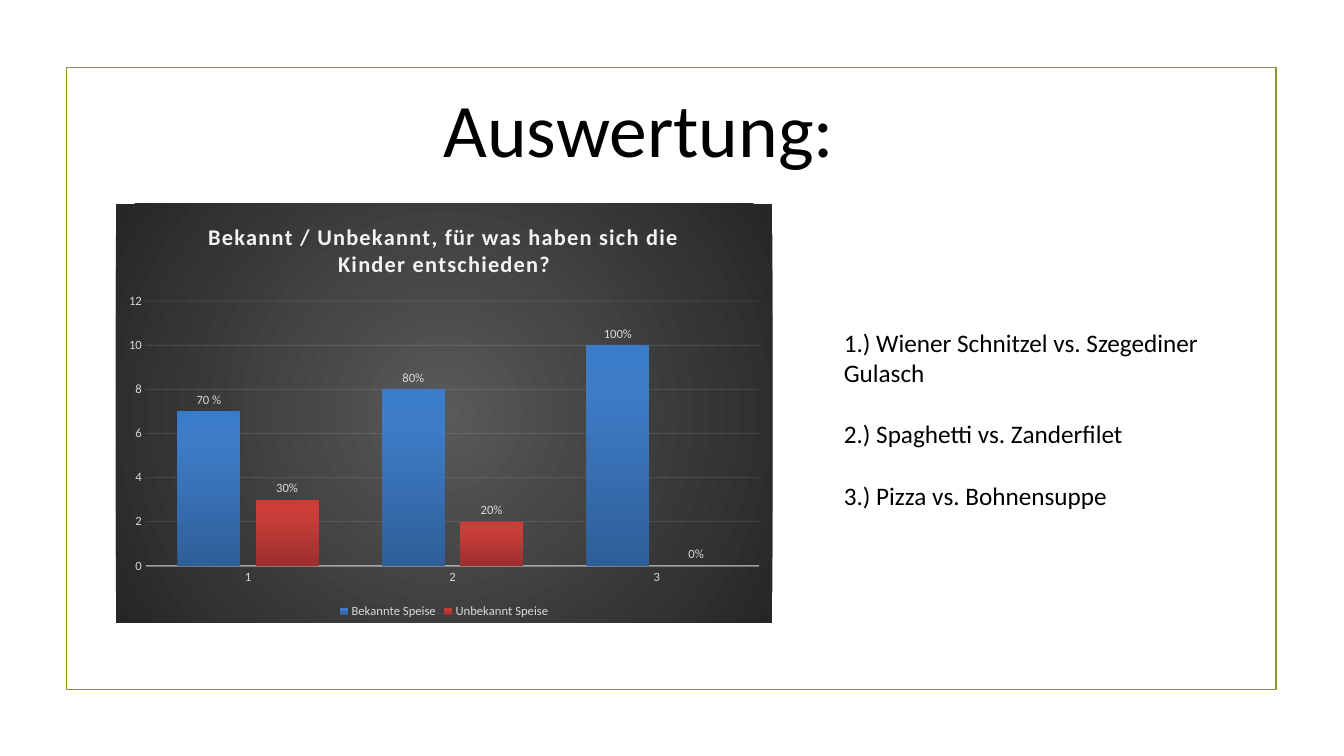
import pptx
import pptx.chart.data
import pptx.dml.color
import pptx.enum.chart
import pptx.enum.shapes
import pptx.oxml
import pptx.oxml.ns
import pptx.util

RGB = pptx.dml.color.RGBColor
BLACK = RGB(0x00, 0x00, 0x00)
OLIVE = RGB(0x83, 0x99, 0x2A)
PALE = RGB(0xF2, 0xF2, 0xF2)
LIGHT_GREY = RGB(0xD9, 0xD9, 0xD9)
BACKDROP = [(0, RGB(0x59, 0x59, 0x59)), (100, RGB(0x26, 0x26, 0x26))]
BLUES = [(0, RGB(0x2F, 0x5F, 0x99)), (80, RGB(0x3D, 0x7C, 0xC7)), (100, RGB(0x3A, 0x7C, 0xCB))]
REDS = [(0, RGB(0x9C, 0x2F, 0x2D)), (80, RGB(0xCB, 0x3E, 0x3A)), (100, RGB(0xCE, 0x3B, 0x37))]
UPWARD = '<a:lin ang="16200000" scaled="0"/>'
FROM_CENTRE = ('<a:path path="circle"><a:fillToRect l="50000" t="50000" '
               'r="50000" b="50000"/></a:path>')

PAIRINGS = ["1.) Wiener Schnitzel vs. Szegediner Gulasch",
            "2.) Spaghetti vs. Zanderfilet",
            "3.) Pizza vs. Bohnensuppe"]
DISHES = [("Bekannte Speise", (7, 8, 10), ("70 %", "80%", "100%"), BLUES),
          ("Unbekannt Speise", (3, 2, 0), ("30%", "20%", "0%"), REDS)]


def px(length):
    """Turn pixels, 100 to the inch, into EMU."""
    return pptx.util.Emu(length * 9144)


def set_font(font, size, color):
    """Set typeface, size and colour of a font."""
    font.name = "Calibri"
    font.size = pptx.util.Pt(size)
    font.color.rgb = color


def write(paragraph, text, size=18, color=BLACK, bold=False, tracking=0, before=0):
    """Add formatted text to a paragraph."""
    run = paragraph.add_run()
    run.text = text
    set_font(run.font, size, color)
    run.font.bold = bold
    if tracking:
        run.font._element.set("spc", str(tracking))
    if before:
        paragraph.space_before = pptx.util.Pt(before)


def gradient(stops, direction):
    """Return a gradient fill element."""
    marks = "".join(f'<a:gs pos="{percent * 1000}"><a:srgbClr val="{color}"/></a:gs>'
                    for percent, color in stops)
    return pptx.oxml.parse_xml(
        f'<a:gradFill {pptx.oxml.ns.nsdecls("a")} rotWithShape="1">'
        f'<a:gsLst>{marks}</a:gsLst>{direction}</a:gradFill>')


def set_line(line, color, width, opacity):
    """Give a chart line its colour, width and opacity."""
    line.color.rgb = color
    line.width = pptx.util.Pt(width)
    tint = line._get_or_add_ln().find(".//" + pptx.oxml.ns.qn("a:srgbClr"))
    tint.append(pptx.oxml.parse_xml(
        f'<a:alpha {pptx.oxml.ns.nsdecls("a")} val="{opacity * 1000}"/>'))


class SlideBuilder:
    """Hold the style and the current slide."""

    def __init__(self, presentation):
        self.shapes = presentation.slides.add_slide(presentation.slide_layouts[6]).shapes

    def frame(self, left, top, width, height):
        """Draw the outline around the content."""
        border = self.shapes.add_shape(pptx.enum.shapes.MSO_SHAPE.RECTANGLE,
                                       *map(px, (left, top, width, height)))
        border.shadow.inherit = False
        border.fill.background()
        border.line.color.rgb = OLIVE
        border.line.width = pptx.util.Pt(1.25)

    def text(self, lines, left, top, width, height, gap=0, **style):
        """Place paragraphs with an equal gap between them."""
        body = self.shapes.add_textbox(*map(px, (left, top, width, height))).text_frame
        body.word_wrap = True
        for index, line in enumerate(lines):
            paragraph = body.add_paragraph() if index else body.paragraphs[0]
            write(paragraph, line, before=gap if index else 0, **style)

    def column_chart(self, heading, categories, dishes, left, top, width, height):
        """Place the clustered columns on a dark backdrop."""
        enums = pptx.enum.chart
        votes = pptx.chart.data.CategoryChartData()
        votes.categories = categories
        for name, values, _, _ in dishes:
            votes.add_series(name, values)
        chart = self.shapes.add_chart(enums.XL_CHART_TYPE.COLUMN_CLUSTERED,
                                      *map(px, (left, top, width, height)), votes).chart
        set_font(chart.font, 10, BLACK)
        backdrop = pptx.oxml.parse_xml(f'<c:spPr {pptx.oxml.ns.nsdecls("c", "a")}/>')
        backdrop.append(gradient(BACKDROP, FROM_CENTRE))
        chart.element.find(pptx.oxml.ns.qn("c:chart")).addnext(backdrop)

        chart.has_title = True
        chart.chart_title.include_in_layout = False
        write(chart.chart_title.text_frame.paragraphs[0], heading,
              size=16, color=PALE, bold=True, tracking=100)
        chart.has_legend = True
        chart.legend.position = enums.XL_LEGEND_POSITION.BOTTOM
        chart.legend.include_in_layout = False
        set_font(chart.legend.font, 9, LIGHT_GREY)

        for axis in (chart.category_axis, chart.value_axis):
            axis.major_tick_mark = axis.minor_tick_mark = enums.XL_TICK_MARK.NONE
            set_font(axis.tick_labels.font, 9, LIGHT_GREY)
        set_line(chart.category_axis.format.line, PALE, 1, 54)
        scale = chart.value_axis
        scale.minimum_scale, scale.maximum_scale, scale.major_unit = 0, 12, 2
        scale.format.line.fill.background()
        set_line(scale.major_gridlines.format.line, PALE, 0.75, 10)

        plot = chart.plots[0]
        plot.vary_by_categories = False
        plot.gap_width, plot.overlap = 100, -24
        for columns, (_, _, shares, stops) in zip(plot.series, dishes):
            columns.invert_if_negative = False
            columns._element.get_or_add_spPr().insert(0, gradient(stops, UPWARD))
            columns.data_labels.show_value = True
            columns.data_labels.position = enums.XL_LABEL_POSITION.OUTSIDE_END
            set_font(columns.data_labels.font, 9, LIGHT_GREY)
            for index, share in enumerate(shares):
                label = columns.points[index].data_label
                write(label.text_frame.paragraphs[0], share, size=9, color=LIGHT_GREY)
                label.position = enums.XL_LABEL_POSITION.OUTSIDE_END


def main():
    """Build the evaluation slide."""
    presentation = pptx.Presentation()
    presentation.slide_width, presentation.slide_height = px(1333), px(750)
    slide = SlideBuilder(presentation)
    slide.frame(66, 67, 1200, 617)
    slide.column_chart("Bekannt / Unbekannt, für was haben sich die Kinder entschieden?",
                       ["1", "2", "3"], DISHES, 115, 202, 651, 416)
    slide.text(PAIRINGS, 827, 320, 402, 192, gap=22)
    slide.text(["Auswertung:"], 430, 76, 732, 101, size=54)
    presentation.save("out.pptx")


if __name__ == "__main__":
    main()
